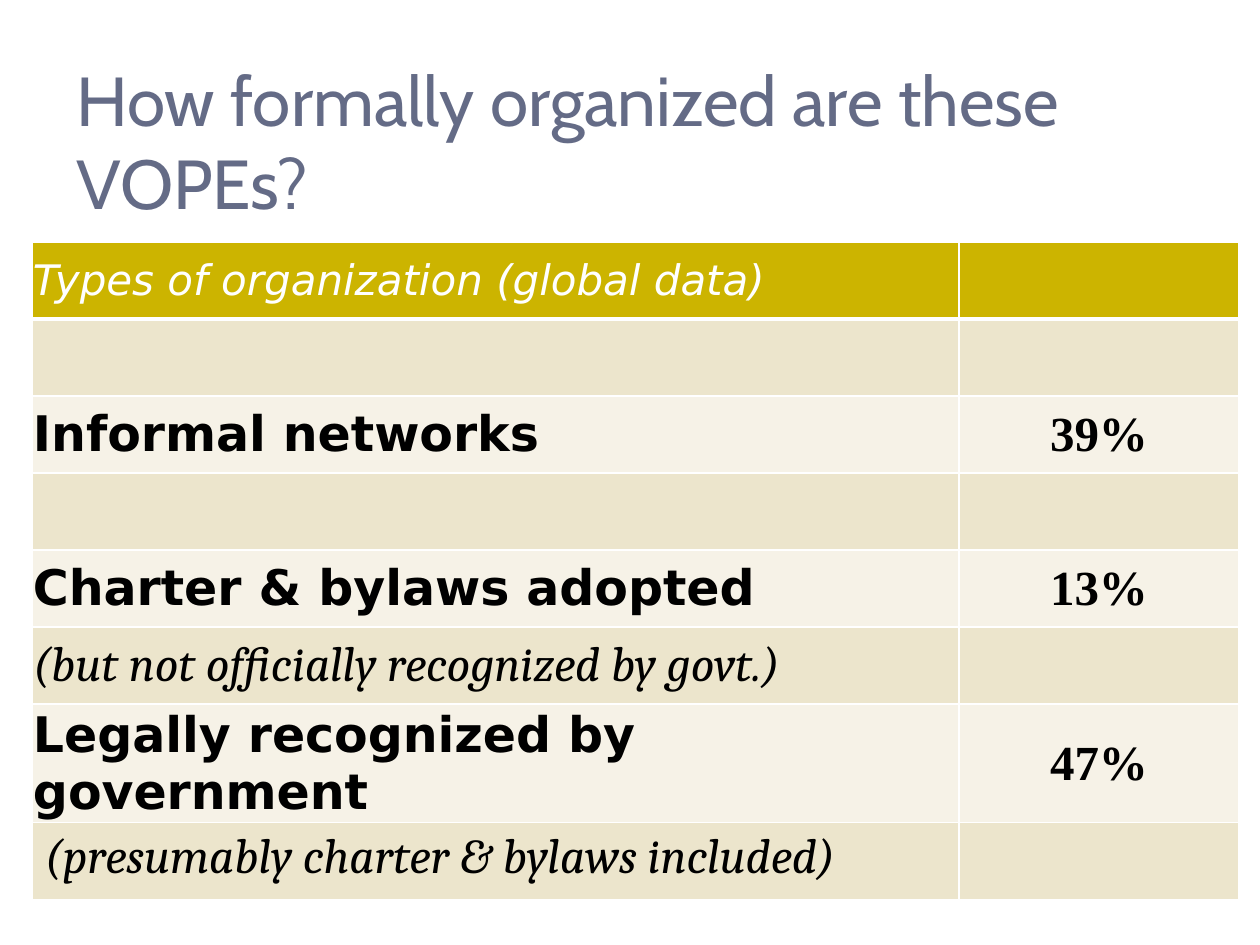
import pptx
import pptx.util
from lxml import etree
from pptx.dml.color import RGBColor
from pptx.enum.text import MSO_ANCHOR, PP_ALIGN
from pptx.oxml.ns import qn

# Content: (label, label style, share)
TITLE = "How formally organized are these VOPEs?"
ROWS = [
    ("Types of organization (global data)", "header", ""),
    ("", "note", ""),
    ("Informal networks", "type", "39%"),
    ("", "note", ""),
    ("Charter & bylaws adopted", "type", "13%"),
    ("(but not officially recognized by govt.)", "note", ""),
    ("Legally recognized by government", "type", "47%"),
    ("(presumably charter & bylaws included)", "note", ""),
]

THEME = {
    "border": "FFFFFF",
    "fills": {"header": "CCB400", "note": "ECE5CC", "type": "F6F2E7"},
    "title": dict(font="Cabin", size=39.6, color="646B86"),
    "header": dict(font="DejaVu Sans", size=24, color="FFFFFF", italic=True),
    "type": dict(font="DejaVu Sans", size=28, color="000000", bold=True),
    "note": dict(font="Cambria", size=28, color="000000", italic=True),
    "share": dict(font="Times New Roman", size=28, color="000000", bold=True,
                  align=PP_ALIGN.CENTER),
}

# Layout in px
SLIDE_W, SLIDE_H = 1260, 945
TITLE_BOX = (64, 73, 1134, 134)
TABLE_LEFT, TABLE_TOP, ROW_H = 32, 242, 77
COLUMN_W = (927, 280)


def px(n):
    return pptx.util.Emu(round(n * 914400 / 126))


def write(frame, text, font, size, color, bold=False, italic=False,
          align=PP_ALIGN.LEFT):
    paragraph = frame.paragraphs[0]
    paragraph.alignment = align
    run = paragraph.add_run()
    run.text = text
    run.font.name = font
    run.font.size = pptx.util.Pt(size)
    run.font.color.rgb = RGBColor.from_string(color)
    run.font.bold = bold
    run.font.italic = italic


def set_borders(cell, bottom_pt):
    properties = cell._tc.get_or_add_tcPr()
    widths = {"a:lnL": 1, "a:lnR": 1, "a:lnT": 1, "a:lnB": bottom_pt}
    for position, (side, width) in enumerate(widths.items()):
        line = etree.Element(qn(side), w=str(pptx.util.Pt(width)))
        fill = etree.SubElement(line, qn("a:solidFill"))
        etree.SubElement(fill, qn("a:srgbClr"), val=THEME["border"])
        properties.insert(position, line)


def fill_cell(cell, text, style, row_style, tight):
    cell.fill.solid()
    cell.fill.fore_color.rgb = RGBColor.from_string(THEME["fills"][row_style])
    set_borders(cell, bottom_pt=3 if row_style == "header" else 1)
    if not text:
        return
    if tight:
        cell.vertical_anchor = MSO_ANCHOR.MIDDLE
        cell.margin_left = cell.margin_right = cell.margin_top = px(1)
        cell.margin_bottom = 0
    write(cell.text_frame, text, **THEME[style])


def main():
    deck = pptx.Presentation()
    deck.slide_width, deck.slide_height = px(SLIDE_W), px(SLIDE_H)
    slide = deck.slides.add_slide(deck.slide_layouts[6])

    # Title
    heading = slide.shapes.add_textbox(*map(px, TITLE_BOX)).text_frame
    heading.word_wrap = True
    heading.vertical_anchor = MSO_ANCHOR.MIDDLE
    write(heading, TITLE, **THEME["title"])

    # Table of organization types
    table = slide.shapes.add_table(
        len(ROWS), len(COLUMN_W), px(TABLE_LEFT), px(TABLE_TOP),
        px(sum(COLUMN_W)), px(ROW_H * len(ROWS))).table
    for column, width in zip(table.columns, COLUMN_W):
        column.width = px(width)
    for r, (label, style, share) in enumerate(ROWS):
        table.rows[r].height = px(ROW_H)
        tight = r < len(ROWS) - 1  # the closing note keeps default margins
        fill_cell(table.cell(r, 0), label, style, style, tight)
        fill_cell(table.cell(r, 1), share, "share", style, tight)

    deck.save("out.pptx")


if __name__ == "__main__":
    main()
